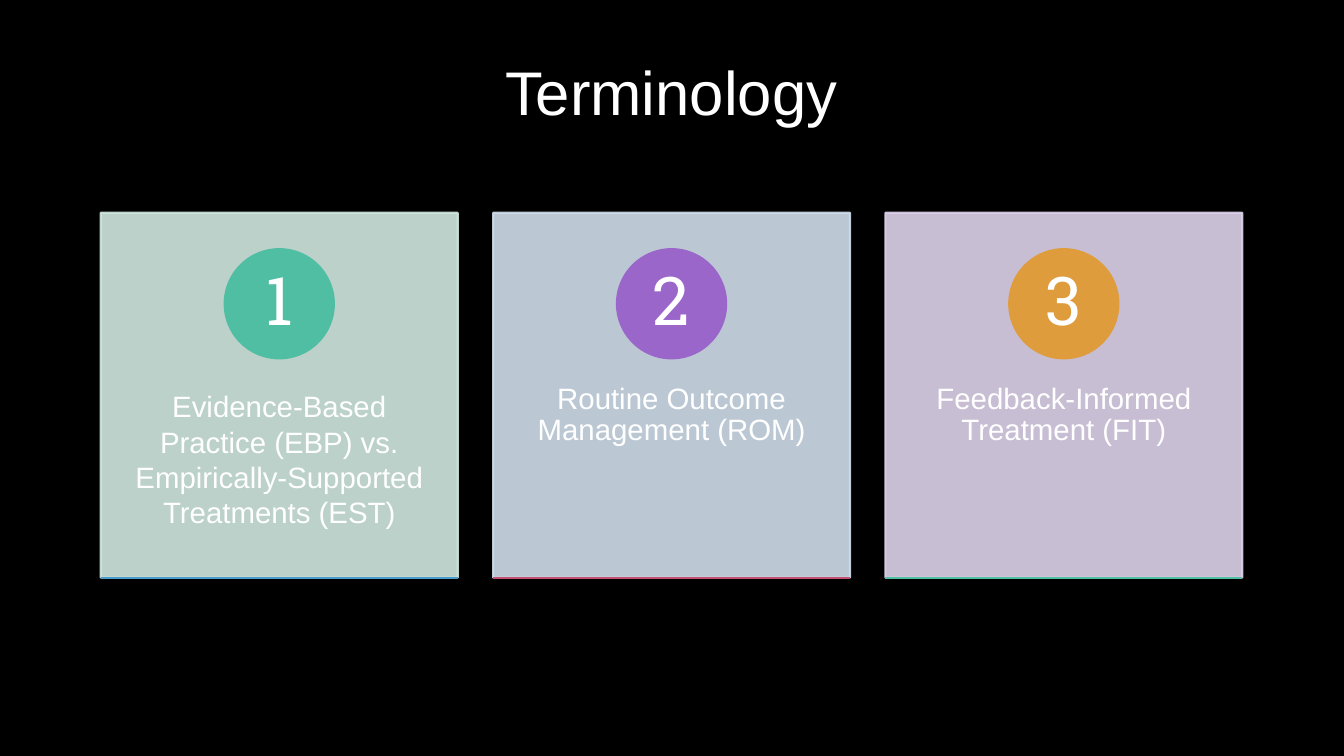
from lxml import etree
from pptx import Presentation
from pptx.dml.color import RGBColor
from pptx.enum.shapes import MSO_CONNECTOR, MSO_SHAPE
from pptx.enum.text import MSO_ANCHOR, PP_ALIGN
from pptx.oxml.ns import qn
from pptx.util import Pt

RECTANGLE, OVAL = MSO_SHAPE.RECTANGLE, MSO_SHAPE.OVAL
STRAIGHT = MSO_CONNECTOR.STRAIGHT
TOP, MIDDLE = MSO_ANCHOR.TOP, MSO_ANCHOR.MIDDLE
CENTER = PP_ALIGN.CENTER

TITLE = "Terminology"
CARDS = [
    {"text": "Evidence-Based Practice (EBP) vs. Empirically-Supported Treatments (EST)",
     "card": "D0E8E0", "circle": "50BEA3", "rule": "4A9CCC", "spacing": 1.0},
    {"text": "Routine Outcome Management (ROM)",
     "card": "D0DEEC", "circle": "9A66CA", "rule": "C54F71", "spacing": 0.9},
    {"text": "Feedback-Informed Treatment (FIT)",
     "card": "DED3EC", "circle": "DE9C3C", "rule": "50BEA3", "spacing": 0.9},
]
WHITE, BLACK = "FFFFFF", "000000"

LEFT, CARD_TOP = 72, 152
CARD_WIDTH, CARD_HEIGHT, CARD_PITCH = 255, 260.6, 280.2
CIRCLE_SIZE, CIRCLE_OFFSET = 78, 26
TEXT_OFFSET, TEXT_HEIGHT = 99.4, 156
LINE_WIDTH = 1.5


def color(value):
    return RGBColor.from_string(value)


def write(shape, text, size, font, spacing, anchor, margins):
    frame = shape.text_frame
    frame.word_wrap = True
    frame.vertical_anchor = anchor
    frame.margin_left = frame.margin_right = Pt(margins[0])
    frame.margin_top = frame.margin_bottom = Pt(margins[1])
    paragraph = frame.paragraphs[0]
    paragraph.text = text
    paragraph.alignment = CENTER
    paragraph.line_spacing = spacing
    paragraph.font.size = Pt(size)
    paragraph.font.name = font
    paragraph.font.color.rgb = color(WHITE)


def add_filled(slide, kind, left, top, width, height, fill, opacity=100):
    shape = slide.shapes.add_shape(kind, Pt(left), Pt(top), Pt(width), Pt(height))
    shape.shadow.inherit = False
    shape.fill.solid()
    shape.fill.fore_color.rgb = color(fill)
    shape.line.color.rgb = color(fill)
    shape.line.width = Pt(LINE_WIDTH)
    if opacity < 100:
        for element in shape.element.spPr.iter(qn("a:srgbClr")):
            etree.SubElement(element, qn("a:alpha")).set("val", str(opacity * 1000))
    return shape


def add_rule(slide, left, top, width, line_color):
    rule = slide.shapes.add_connector(
        STRAIGHT, Pt(left), Pt(top), Pt(left + width), Pt(top))
    rule.line.color.rgb = color(line_color)
    rule.line.width = Pt(LINE_WIDTH)
    etree.SubElement(rule.element.spPr, qn("a:effectLst"))


def add_card(slide, index, card):
    left = LEFT + index * CARD_PITCH
    add_filled(slide, RECTANGLE, left, CARD_TOP, CARD_WIDTH, CARD_HEIGHT,
               card["card"], 90)
    description = slide.shapes.add_textbox(
        Pt(left), Pt(CARD_TOP + TEXT_OFFSET), Pt(CARD_WIDTH), Pt(TEXT_HEIGHT))
    write(description, card["text"], 21, "Arial", card["spacing"], TOP, (20, 26))
    circle = add_filled(slide, OVAL, left + (CARD_WIDTH - CIRCLE_SIZE) / 2,
                        CARD_TOP + CIRCLE_OFFSET, CIRCLE_SIZE, CIRCLE_SIZE,
                        card["circle"])
    write(circle, str(index + 1), 48, "Roboto Slab", 0.9, MIDDLE, (5.8, 0.7))
    add_rule(slide, left, CARD_TOP + CARD_HEIGHT, CARD_WIDTH, card["rule"])


def main():
    presentation = Presentation()
    presentation.slide_width, presentation.slide_height = Pt(960), Pt(540)
    slide = presentation.slides.add_slide(presentation.slide_layouts[5])
    slide.background.fill.solid()
    slide.background.fill.fore_color.rgb = color(BLACK)
    title = slide.shapes.title
    title.left, title.top, title.width, title.height = Pt(72), Pt(22.3), Pt(815), Pt(92)
    write(title, TITLE, 44, "Arial", 0.9, MIDDLE, (7.2, 3.6))
    for index, card in enumerate(CARDS):
        add_card(slide, index, card)
    presentation.save("out.pptx")


if __name__ == "__main__":
    main()
